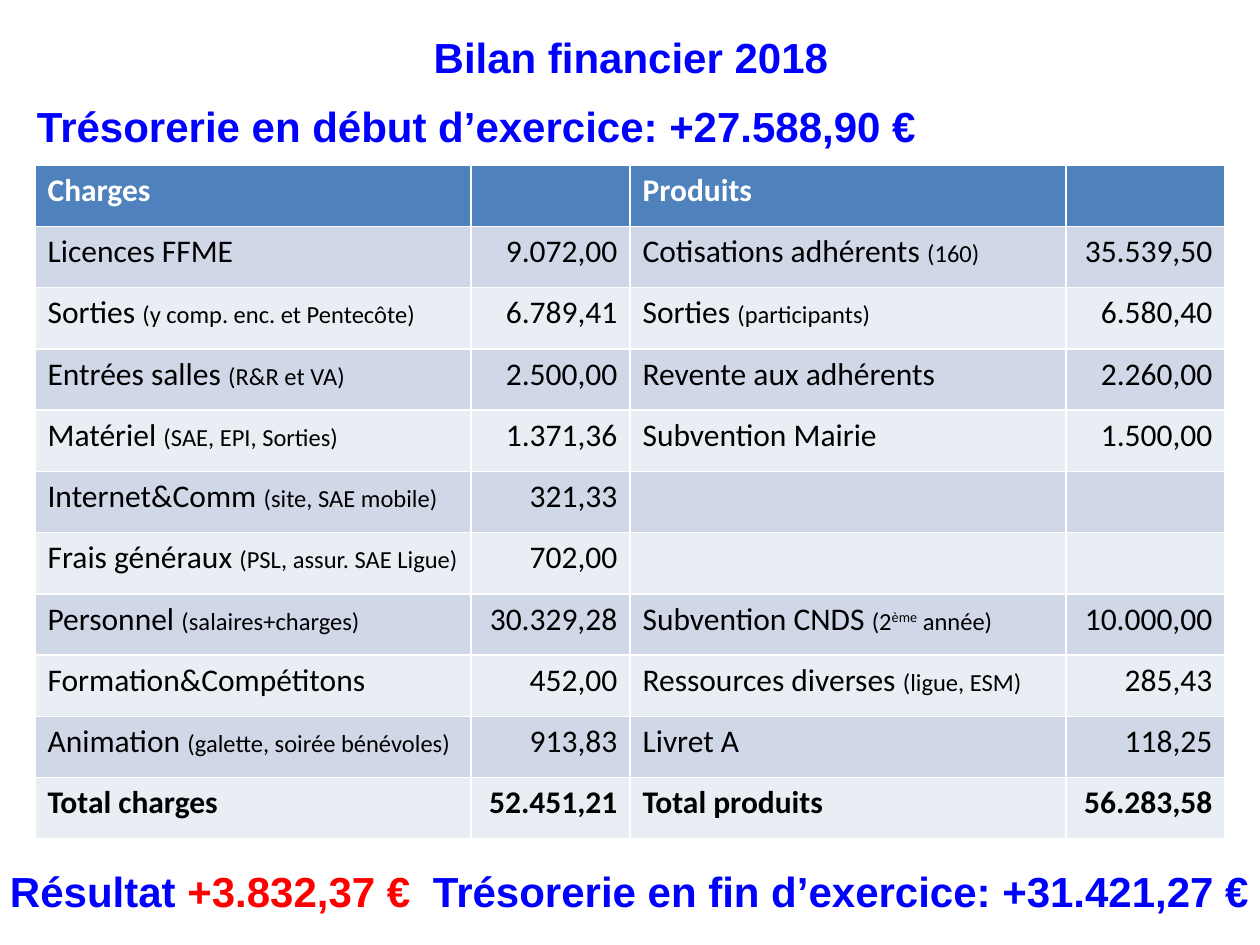
from lxml import etree
from pptx import Presentation
from pptx.dml.color import RGBColor
from pptx.enum.text import MSO_ANCHOR, PP_ALIGN
from pptx.oxml.ns import qn
from pptx.util import Emu, Pt

LEFT, CENTER, RIGHT = PP_ALIGN.LEFT, PP_ALIGN.CENTER, PP_ALIGN.RIGHT
MIDDLE = MSO_ANCHOR.MIDDLE
BLUE = RGBColor(0x00, 0x00, 0xFF)
RED = RGBColor(0xFF, 0x00, 0x00)
WHITE = RGBColor(0xFF, 0xFF, 0xFF)
BLACK = RGBColor(0x00, 0x00, 0x00)
HEADER_FILL = RGBColor(0x4F, 0x81, 0xBD)
BAND_FILLS = (RGBColor(0xE9, 0xED, 0xF4), RGBColor(0xD0, 0xD8, 0xE8))
TITLE_ONLY = 5
EMU_PER_PX = 914400 / 126

COLUMN_WIDTHS = (436, 159, 436, 159)
ROWS = [
    ("Charges", "", "Produits", ""),
    ("Licences FFME", "9.072,00", "Cotisations adhérents (160)", "35.539,50"),
    ("Sorties (y comp. enc. et Pentecôte)", "6.789,41", "Sorties (participants)", "6.580,40"),
    ("Entrées salles (R&R et VA)", "2.500,00", "Revente aux adhérents", "2.260,00"),
    ("Matériel (SAE, EPI, Sorties)", "1.371,36", "Subvention Mairie", "1.500,00"),
    ("Internet&Comm (site, SAE mobile)", "321,33", "", ""),
    ("Frais généraux (PSL, assur. SAE Ligue)", "702,00", "", ""),
    ("Personnel (salaires+charges)", "30.329,28", "Subvention CNDS (2^ème^ année)", "10.000,00"),
    ("Formation&Compétitons", "452,00", "Ressources diverses (ligue, ESM)", "285,43"),
    ("Animation (galette, soirée bénévoles)", "913,83", "Livret A", "118,25"),
    ("Total charges", "52.451,21", "Total produits", "56.283,58"),
]


def px(length):
    return Emu(round(length * EMU_PER_PX))


def add_text(para, text, font="Arial", size=24, color=BLUE, bold=True, raised=False):
    span = para.add_run()
    span.text = text
    span.font.name = font
    span.font.size = Pt(size)
    span.font.color.rgb = color
    span.font.bold = bold
    if raised:
        span._r.get_or_add_rPr().set("baseline", "30000")


def prepare_box(box, left, top, width, height, align=LEFT):
    box.left, box.top, box.width, box.height = map(px, (left, top, width, height))
    frame = box.text_frame
    frame.margin_left = frame.margin_right = frame.margin_top = frame.margin_bottom = 0
    frame.word_wrap = True
    frame.vertical_anchor = MIDDLE
    para = frame.paragraphs[0]
    para.alignment = align
    return para


def add_line(page, left, top, width, height):
    return prepare_box(page.shapes.add_textbox(0, 0, 0, 0), left, top, width, height)


def add_tab_stop(para, position):
    tabs = etree.SubElement(para._p.get_or_add_pPr(), qn("a:tabLst"))
    etree.SubElement(tabs, qn("a:tab"), pos=str(px(position)), algn="l")


def fill_label(para, text, **style):
    label, bracket, detail = text.partition("(")
    add_text(para, label, size=18, **style)
    if bracket:
        for index, part in enumerate((bracket + detail).split("^")):
            add_text(para, part, size=14, raised=index % 2 == 1, **style)


def add_accounts(page, left, top, height):
    frame = page.shapes.add_table(len(ROWS), len(COLUMN_WIDTHS), px(left), px(top),
                                  px(sum(COLUMN_WIDTHS)), px(height))
    table = frame.table
    for column, width in zip(table.columns, COLUMN_WIDTHS):
        column.width = px(width)
    for row, values in enumerate(ROWS):
        header = row == 0
        style = dict(font="Calibri", color=WHITE if header else BLACK,
                     bold=row in (0, len(ROWS) - 1))
        for column, value in enumerate(values):
            cell = table.cell(row, column)
            cell.fill.solid()
            cell.fill.fore_color.rgb = HEADER_FILL if header else BAND_FILLS[row % 2]
            if value:
                para = cell.text_frame.paragraphs[0]
                para.alignment = RIGHT if column % 2 else LEFT
                fill_label(para, value, **style)


def main():
    deck = Presentation()
    deck.slide_width, deck.slide_height = px(1260), px(945)
    page = deck.slides.add_slide(deck.slide_layouts[TITLE_ONLY])

    title = prepare_box(page.shapes.title, 430, 28, 402, 58, align=CENTER)
    add_text(title, "Bilan financier 2018")
    add_accounts(page, 35, 165, 674)
    opening = add_line(page, 37, 97, 881, 58)
    add_text(opening, "Trésorerie en début d’exercice: +27.588,90 €")

    closing = add_line(page, 10, 862, 1245, 58)
    add_tab_stop(closing, 423)
    add_text(closing, "Résultat ")
    add_text(closing, "+3.832,37 €\t", color=RED)
    add_text(closing, "Trésorerie en fin d’exercice: +31.421,27 €")
    deck.save("out.pptx")


if __name__ == "__main__":
    main()
